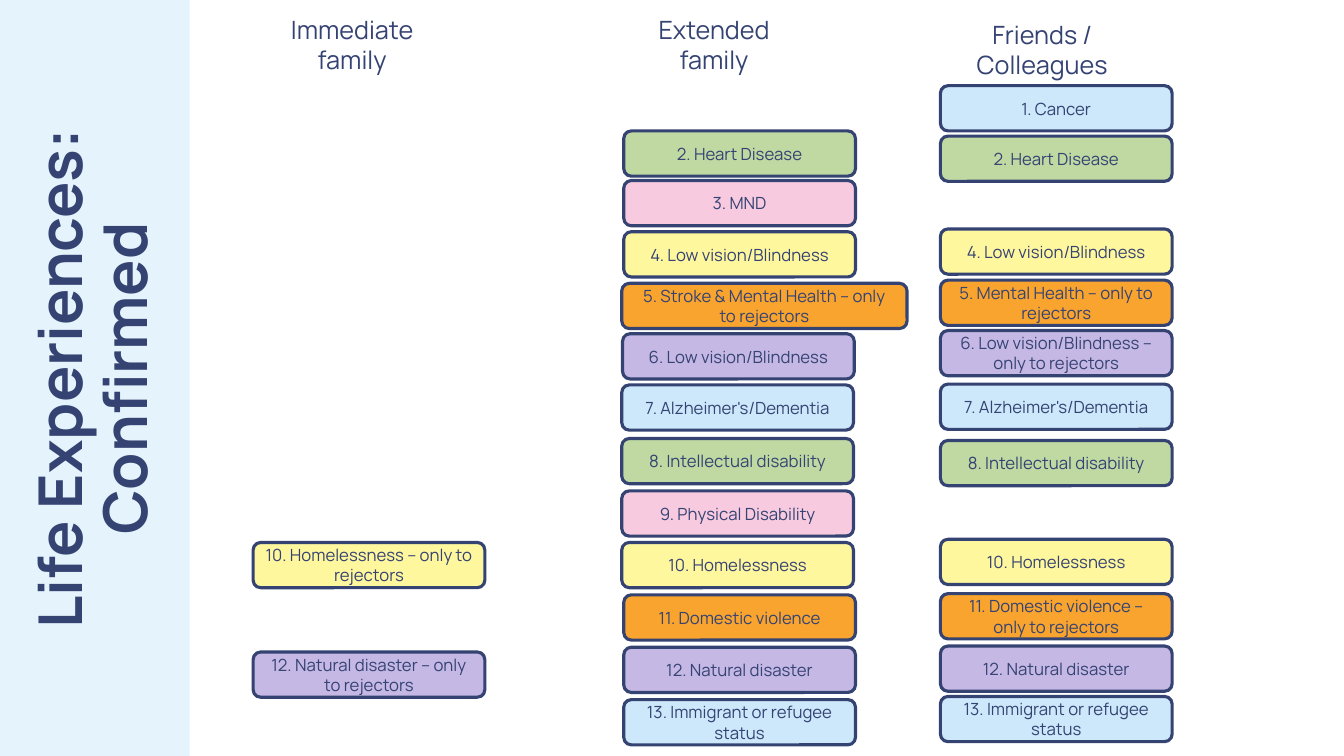
import dataclasses
import typing

import lxml.etree
import pptx
import pptx.dml.color
import pptx.enum.shapes
import pptx.enum.text
import pptx.oxml.ns
import pptx.util

Cm = pptx.util.Cm
FONT = "Manrope"
COLOURS = {
    "ink": "354373",
    "blue": "CCE8FA",
    "green": "C0D9A2",
    "pink": "F7CADF",
    "yellow": "FFF79E",
    "orange": "F8A42E",
    "purple": "C5B8E5",
}
TOPIC_CYCLE = ["blue", "green", "pink", "yellow", "orange", "purple"]
CARD_WIDTH, CARD_HEIGHT = 5.84, 1.14


@dataclasses.dataclass(frozen=True)
class Experience:
    number: int
    topic: str
    top: float
    shift: float = 0
    width: float = CARD_WIDTH


@dataclasses.dataclass(frozen=True)
class Circle:
    heading: str
    heading_left: float
    heading_top: float
    heading_width: float
    cards_left: float
    experiences: typing.List[Experience]


CIRCLES = [
    Circle("Immediate family", 6.83, 0.23, 4.09, 6.38, [
        Experience(10, "Homelessness – only to rejectors", 13.67),
        Experience(12, "Natural disaster – only to rejectors", 16.43),
    ]),
    Circle("Extended family", 15.95, 0.23, 4.09, 15.72, [
        Experience(2, "Heart Disease", 3.3),
        Experience(3, "MND", 4.55),
        Experience(4, "Low vision/Blindness", 5.84),
        Experience(5, "Stroke & Mental Health – only to rejectors", 7.14, -0.05, 7.19),
        Experience(6, "Low vision/Blindness", 8.41, -0.03),
        Experience(7, "Alzheimer's/Dementia", 9.7, -0.05),
        Experience(8, "Intellectual disability", 11.05, -0.05),
        Experience(9, "Physical Disability", 12.37, -0.05),
        Experience(10, "Homelessness", 13.67, -0.05),
        Experience(11, "Domestic violence", 14.99),
        Experience(12, "Natural disaster", 16.31),
        Experience(13, "Immigrant or refugee status", 17.63),
    ]),
    Circle("Friends / Colleagues", 24.03, 0.36, 4.47, 23.7, [
        Experience(1, "Cancer", 2.16),
        Experience(2, "Heart Disease", 3.43),
        Experience(4, "Low vision/Blindness", 5.77),
        Experience(5, "Mental Health – only to rejectors", 7.06),
        Experience(6, "Low vision/Blindness – only to rejectors", 8.33),
        Experience(7, "Alzheimer's/Dementia", 9.68),
        Experience(8, "Intellectual disability", 11.1),
        Experience(10, "Homelessness", 13.59),
        Experience(11, "Domestic violence – only to rejectors", 14.96),
        Experience(12, "Natural disaster", 16.28),
        Experience(13, "Immigrant or refugee status", 17.55),
    ]),
]


def colour(name: str) -> pptx.dml.color.RGBColor:
    return pptx.dml.color.RGBColor.from_string(COLOURS[name])


def write(frame, wording: str, size: float, bold: bool = False) -> None:
    frame.word_wrap = True
    paragraph = frame.paragraphs[0]
    paragraph.alignment = pptx.enum.text.PP_ALIGN.CENTER
    run = paragraph.add_run()
    run.text = wording
    run.font.name = FONT
    run.font.size = pptx.util.Pt(size)
    run.font.bold = bold
    run.font.color.rgb = colour("ink")


def draw_title(slide) -> None:
    title = slide.shapes.title
    title.left, title.top = Cm(-6.4), Cm(7.7)
    title.width, title.height = Cm(17.6), Cm(3.68)
    title.rotation = 270
    frame = title.text_frame
    frame.auto_size = pptx.enum.text.MSO_AUTO_SIZE.NONE
    frame.vertical_anchor = pptx.enum.text.MSO_ANCHOR.MIDDLE
    write(frame, "Life Experiences: Confirmed", 43.2, bold=True)
    frame.paragraphs[0].line_spacing = 0.9


def draw_sidebar(slide, height: int) -> None:
    sidebar = slide.shapes.add_shape(
        pptx.enum.shapes.MSO_SHAPE.RECTANGLE, 0, 0, Cm(4.78), height)
    sidebar.shadow.inherit = False
    sidebar.fill.solid()
    sidebar.fill.fore_color.rgb = colour("blue")
    sidebar.line.fill.background()
    tint = sidebar.element.spPr.find(".//" + pptx.oxml.ns.qn("a:srgbClr"))
    lxml.etree.SubElement(tint, pptx.oxml.ns.qn("a:alpha"), val="50000")
    slide.shapes.title.element.addprevious(sidebar.element)


def draw_card(slide, experience: Experience, left: float) -> None:
    card = slide.shapes.add_shape(
        pptx.enum.shapes.MSO_SHAPE.ROUNDED_RECTANGLE,
        Cm(left + experience.shift), Cm(experience.top),
        Cm(experience.width), Cm(CARD_HEIGHT))
    card.shadow.inherit = False
    card.fill.solid()
    card.fill.fore_color.rgb = colour(
        TOPIC_CYCLE[(experience.number - 1) % len(TOPIC_CYCLE)])
    card.line.color.rgb = colour("ink")
    card.line.width = pptx.util.Pt(2.25)
    card.text_frame.vertical_anchor = pptx.enum.text.MSO_ANCHOR.MIDDLE
    write(card.text_frame, f"{experience.number}. {experience.topic}", 12)


def draw_circle(slide, circle: Circle) -> None:
    heading = slide.shapes.add_textbox(
        Cm(circle.heading_left), Cm(circle.heading_top),
        Cm(circle.heading_width), Cm(1.8))
    heading.text_frame.auto_size = pptx.enum.text.MSO_AUTO_SIZE.SHAPE_TO_FIT_TEXT
    write(heading.text_frame, circle.heading, 18)
    for experience in circle.experiences:
        draw_card(slide, experience, circle.cards_left)


def main() -> None:
    deck = pptx.Presentation()
    deck.slide_width, deck.slide_height = Cm(33.87), Cm(19.05)
    slide = deck.slides.add_slide(deck.slide_layouts[5])
    draw_title(slide)
    draw_sidebar(slide, deck.slide_height)
    for circle in CIRCLES:
        draw_circle(slide, circle)
    deck.save("out.pptx")


if __name__ == "__main__":
    main()
